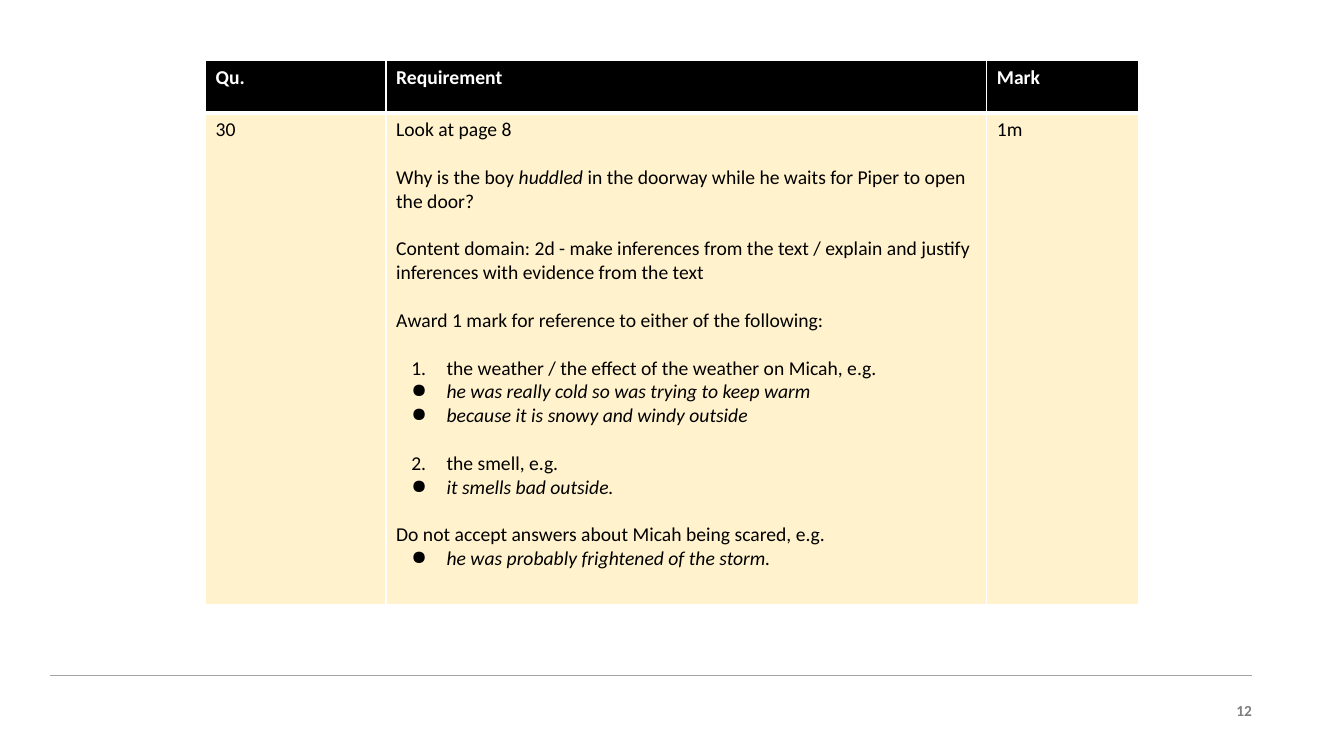
from dataclasses import dataclass

from lxml import etree
from pptx import Presentation
from pptx.dml.color import RGBColor
from pptx.enum import shapes, text
from pptx.oxml import ns
from pptx.util import Pt

BLACK = RGBColor(0x00, 0x00, 0x00)
WHITE = RGBColor(0xFF, 0xFF, 0xFF)
CREAM = RGBColor(0xFF, 0xF2, 0xCC)
RULE_GREY = RGBColor(0xA5, 0xA5, 0xA5)
NUMBER_GREY = RGBColor(0x7F, 0x7F, 0x7F)

FONT = "Calibri"
LINE_GAP = Pt(17.05)
LIST_INDENT = 36
LIST_HANGING = 25.2
COLUMN_WIDTHS = (128.9, 429.1, 108.7)
ROW_HEIGHTS = (37.4, 351.4)

HEADING_FORMAT = {"name": FONT, "size": Pt(14), "bold": True}
BODY_FORMAT = {"name": FONT, "size": Pt(14), "bold": False}
PAGE_FORMAT = {"name": FONT, "size": Pt(11), "bold": True}


@dataclass(frozen=True)
class Span:
    wording: str
    italic: bool = False


@dataclass(frozen=True)
class Line:
    spans: tuple[Span, ...]
    gap: bool = False
    number: int = 0
    bullet: bool = False


def plain(wording: str, gap: bool = False, number: int = 0) -> Line:
    return Line((Span(wording),), gap, number)


def example(wording: str) -> Line:
    return Line((Span(wording, True),), bullet=True)


HEADINGS = ("Qu.", "Requirement", "Mark")
REQUIREMENT = (
    plain("Look at page 8"),
    Line((
        Span("Why is the boy "),
        Span("huddled", True),
        Span(" in the doorway while he waits for Piper to open the door?"),
    ), gap=True),
    plain("Content domain: 2d - make inferences from the text / explain and justify "
          "inferences with evidence from the text", gap=True),
    plain("Award 1 mark for reference to either of the following:", gap=True),
    plain("the weather / the effect of the weather on Micah, e.g.", gap=True, number=1),
    example("he was really cold so was trying to keep warm"),
    example("because it is snowy and windy outside"),
    plain("the smell, e.g.", gap=True, number=2),
    example("it smells bad outside."),
    plain("Do not accept answers about Micah being scared, e.g.", gap=True),
    example("he was probably frightened of the storm."),
)
MARK_SCHEME = (
    tuple((plain(heading),) for heading in HEADINGS),
    ((plain("30"),), REQUIREMENT, (plain("1m"),)),
)


def apply_format(font, values: dict, color: RGBColor) -> None:
    for attribute, value in values.items():
        setattr(font, attribute, value)
    font.color.rgb = color


def add_list_marker(paragraph, line: Line) -> None:
    properties = paragraph._p.get_or_add_pPr()
    properties.set("marL", str(Pt(LIST_INDENT)))
    properties.set("indent", str(Pt(-LIST_HANGING)))
    if line.number:
        etree.SubElement(properties, ns.qn("a:buAutoNum"),
                         type="arabicPeriod", startAt=str(line.number))
    else:
        etree.SubElement(properties, ns.qn("a:buChar"), char="●")


def write_lines(frame, lines: tuple[Line, ...], values: dict, color: RGBColor) -> None:
    for index, line in enumerate(lines):
        paragraph = frame.add_paragraph() if index else frame.paragraphs[0]
        if line.number or line.bullet:
            add_list_marker(paragraph, line)
        if line.gap:
            paragraph.space_before = LINE_GAP
        for span in line.spans:
            run = paragraph.add_run()
            run.text = span.wording
            apply_format(run.font, values | {"italic": span.italic}, color)


def add_borders(cell, widths: dict[str, float]) -> None:
    properties = cell._tc.get_or_add_tcPr()
    for index, (side, width) in enumerate(widths.items()):
        border = etree.Element(ns.qn(f"a:{side}"), w=str(Pt(width)))
        fill = etree.SubElement(border, ns.qn("a:solidFill"))
        etree.SubElement(fill, ns.qn("a:srgbClr"), val=str(WHITE))
        properties.insert(index, border)


def add_mark_scheme(slide) -> None:
    table = slide.shapes.add_table(
        len(ROW_HEIGHTS), len(COLUMN_WIDTHS), Pt(146.9), Pt(43.2),
        Pt(sum(COLUMN_WIDTHS)), Pt(sum(ROW_HEIGHTS))).table
    for column, width in zip(table.columns, COLUMN_WIDTHS):
        column.width = Pt(width)
    for row, height in zip(table.rows, ROW_HEIGHTS):
        row.height = Pt(height)
    for row_index, contents in enumerate(MARK_SCHEME):
        is_heading = row_index == 0
        values = HEADING_FORMAT if is_heading else BODY_FORMAT
        for column_index, lines in enumerate(contents):
            cell = table.cell(row_index, column_index)
            cell.fill.solid()
            cell.fill.fore_color.rgb = BLACK if is_heading else CREAM
            add_borders(cell, {"lnL": 1, "lnR": 1, "lnT": 1 if is_heading else 3,
                               "lnB": 3 if is_heading else 1})
            write_lines(cell.text_frame, lines, values, WHITE if is_heading else BLACK)


def add_footer(slide) -> None:
    rule = slide.shapes.add_connector(
        shapes.MSO_CONNECTOR.STRAIGHT, Pt(36), Pt(482.4), Pt(894.2), Pt(482.4))
    rule.line.color.rgb = RULE_GREY
    rule.line.width = Pt(0.75)
    etree.SubElement(rule._element.spPr, ns.qn("a:effectLst"))
    page_number = slide.shapes.add_textbox(Pt(874), Pt(497.5), Pt(27.4), Pt(20.9))
    frame = page_number.text_frame
    frame.word_wrap = False
    write_lines(frame, (plain("12"),), PAGE_FORMAT, NUMBER_GREY)
    frame.paragraphs[0].alignment = text.PP_ALIGN.RIGHT


def main() -> None:
    presentation = Presentation()
    presentation.slide_width = Pt(960)
    presentation.slide_height = Pt(540)
    slide = presentation.slides.add_slide(presentation.slide_layouts[6])
    add_footer(slide)
    add_mark_scheme(slide)
    presentation.save("out.pptx")


if __name__ == "__main__":
    main()
